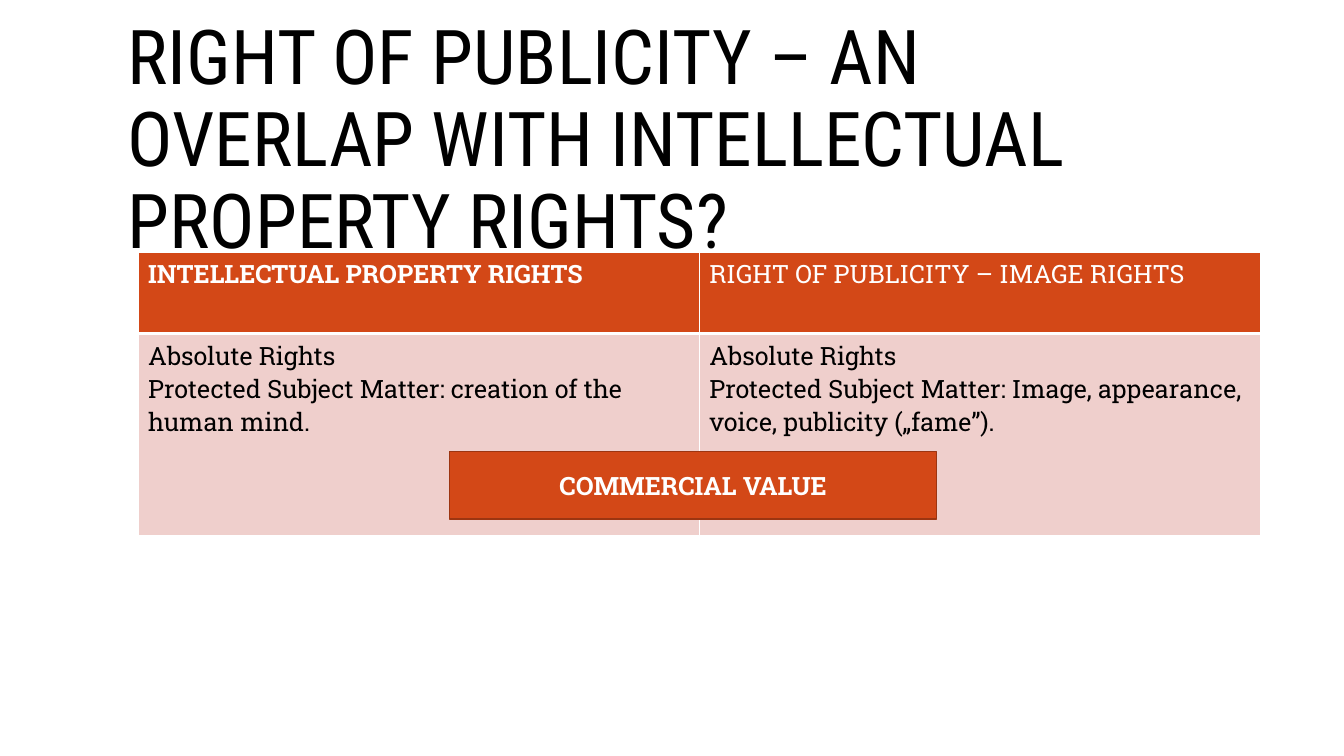
"""Build the slide comparing intellectual property with the right of publicity."""
from dataclasses import dataclass

from lxml.etree import SubElement
from pptx import Presentation
from pptx.dml.color import RGBColor
from pptx.enum.shapes import MSO_SHAPE as Shape
from pptx.enum.text import MSO_ANCHOR as Anchor, PP_ALIGN as Align
from pptx.oxml.ns import qn
from pptx.util import Inches, Pt

WIDTH, HEIGHT = Inches(13.33), Inches(7.5)
HEAD_FONT, BODY_FONT = "Roboto Condensed", "Roboto Slab"
ORANGE, RUST, PINK = "D34817", "9C3511", "EFCFCC"
BLACK, WHITE = "000000", "FFFFFF"


@dataclass(frozen=True)
class Area:
    """A rectangle in shares of the slide's width and height."""

    left: float
    top: float
    width: float
    height: float

    def lengths(self) -> tuple[int, int, int, int]:
        """Return left, top, width and height as slide lengths."""
        return (round(self.left * WIDTH), round(self.top * HEIGHT),
                round(self.width * WIDTH), round(self.height * HEIGHT))


@dataclass(frozen=True)
class Style:
    """The look of a span of text."""

    color: str
    bold: bool = False
    font: str = BODY_FONT
    size: int = 18


@dataclass(frozen=True)
class Entry:
    """One table cell: its paragraphs, text style, fill and lower border."""

    lines: tuple[str, ...]
    style: Style
    fill: str
    bottom: int


TITLE = Area(1.17 / 13.33, 0.53 / 7.5, 11 / 13.33, 1.76 / 7.5)
TABLE = Area(1.37 / 13.33, 2.5 / 7.5, 11.13 / 13.33, 2.81 / 7.5)
VALUE = Area(4.46 / 13.33, 4.48 / 7.5, 4.83 / 13.33, 0.67 / 7.5)
ROW_SHARES = (0.81 / 2.81, 2 / 2.81)

ROWS = (
    (Entry(("INTELLECTUAL PROPERTY RIGHTS",), Style(WHITE, True), ORANGE, 3),
     Entry(("RIGHT OF PUBLICITY – IMAGE RIGHTS",), Style(WHITE), ORANGE, 3)),
    (Entry(("Absolute Rights",
            "Protected Subject Matter: creation of the human mind."),
           Style(BLACK), PINK, 1),
     Entry(("Absolute Rights",
            "Protected Subject Matter: Image, appearance, voice, publicity („fame”)."),
           Style(BLACK), PINK, 1)),
)


def paint(target, color: str) -> None:
    """Give a fill a solid colour."""
    target.solid()
    target.fore_color.rgb = RGBColor.from_string(color)


def write(frame, lines: tuple[str, ...], style: Style,
          align: Align = Align.LEFT, spacing: float = 1.0) -> None:
    """Write one paragraph per line into a text frame."""
    frame.word_wrap = True
    for index, line in enumerate(lines):
        para = frame.add_paragraph() if index else frame.paragraphs[0]
        para.alignment = align
        para.line_spacing = spacing
        span = para.add_run()
        span.text = line
        span.font.name = style.font
        span.font.size = Pt(style.size)
        span.font.bold = style.bold
        paint(span.font.fill, style.color)


def add_borders(cell, bottom: int) -> None:
    """Draw white borders around a table cell."""
    properties = cell._tc.get_or_add_tcPr()
    sides = (("a:lnL", 1), ("a:lnR", 1), ("a:lnT", 1), ("a:lnB", bottom))
    for index, (tag, points) in enumerate(sides):
        border = SubElement(properties, qn(tag), w=str(Pt(points)))
        solid = SubElement(border, qn("a:solidFill"))
        SubElement(solid, qn("a:srgbClr"), val=WHITE)
        properties.insert(index, border)


def add_title(page) -> None:
    """Add the heading."""
    box = page.shapes.add_textbox(*TITLE.lengths())
    box.text_frame.vertical_anchor = Anchor.MIDDLE
    write(box.text_frame,
          ("RIGHT OF PUBLICITY – AN OVERLAP WITH INTELLECTUAL PROPERTY RIGHTS?",),
          Style(BLACK, font=HEAD_FONT, size=54), spacing=0.9)


def add_comparison(page) -> None:
    """Add the table of the two kinds of rights."""
    table = page.shapes.add_table(len(ROWS), len(ROWS[0]), *TABLE.lengths()).table
    table.first_row = table.horz_banding = False
    for row, (share, entries) in enumerate(zip(ROW_SHARES, ROWS)):
        table.rows[row].height = round(share * TABLE.height * HEIGHT)
        for column, entry in enumerate(entries):
            cell = table.cell(row, column)
            paint(cell.fill, entry.fill)
            add_borders(cell, entry.bottom)
            write(cell.text_frame, entry.lines, entry.style)


def add_value(page) -> None:
    """Add the bar naming what both kinds of rights share."""
    box = page.shapes.add_shape(Shape.RECTANGLE, *VALUE.lengths())
    box.shadow.inherit = False
    paint(box.fill, ORANGE)
    paint(box.line.fill, RUST)
    box.line.width = Pt(1)
    box.text_frame.vertical_anchor = Anchor.MIDDLE
    write(box.text_frame, ("COMMERCIAL VALUE",), Style(WHITE, True), Align.CENTER)


def main() -> None:
    """Build and save the deck."""
    deck = Presentation()
    deck.slide_width, deck.slide_height = WIDTH, HEIGHT
    page = deck.slides.add_slide(deck.slide_layouts[6])
    add_title(page)
    add_comparison(page)
    add_value(page)
    deck.save("out.pptx")


if __name__ == "__main__":
    main()
